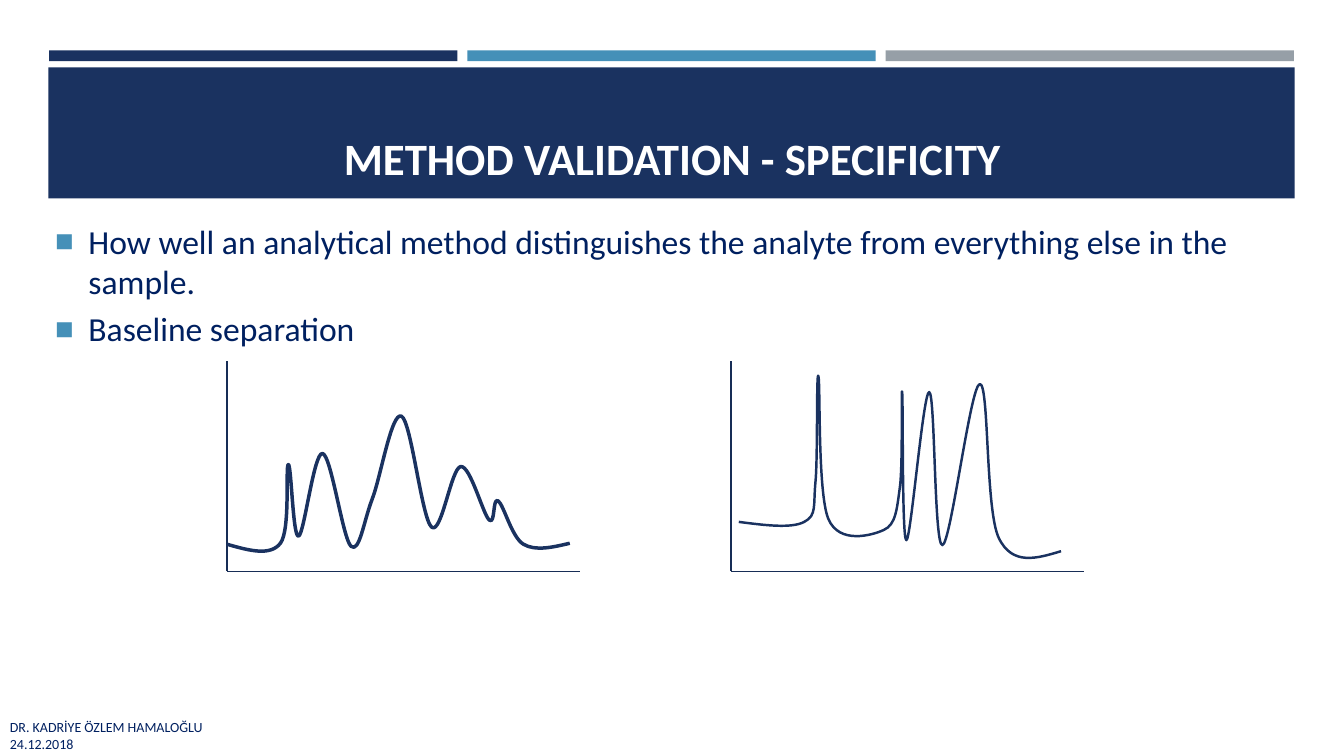
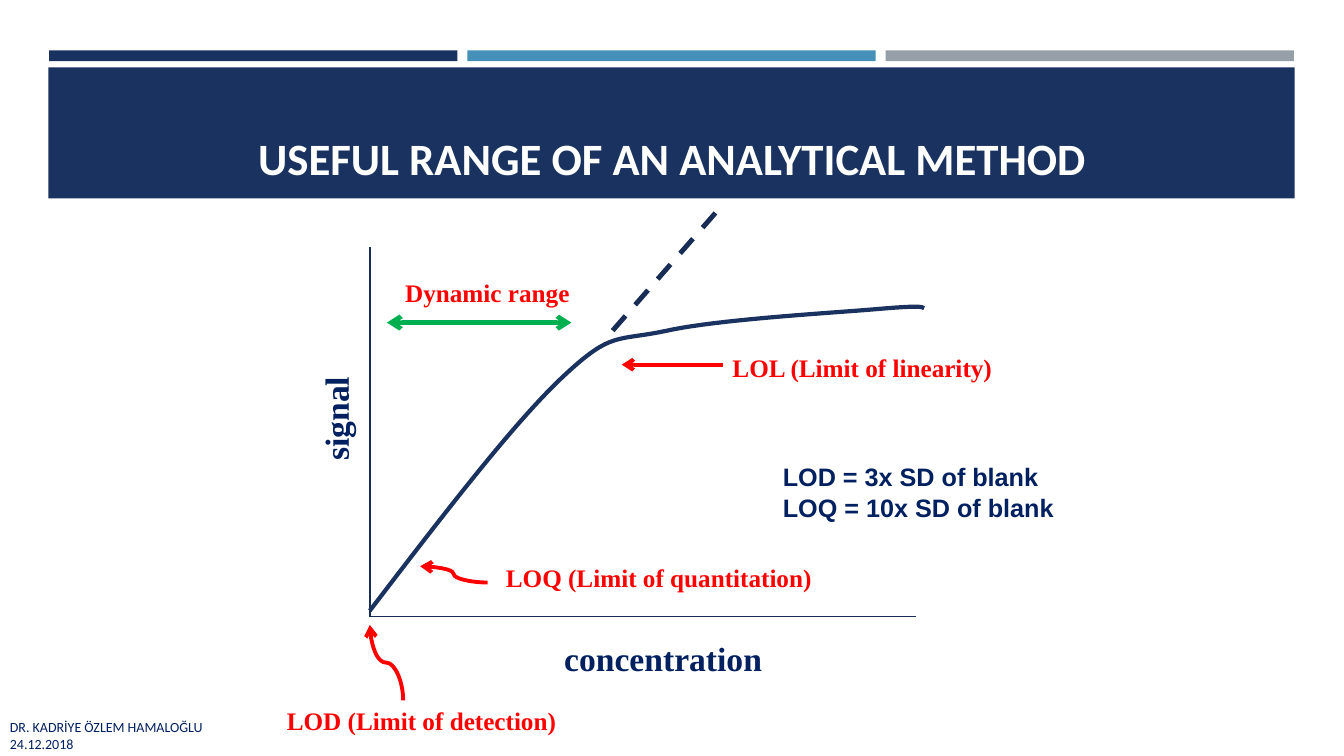
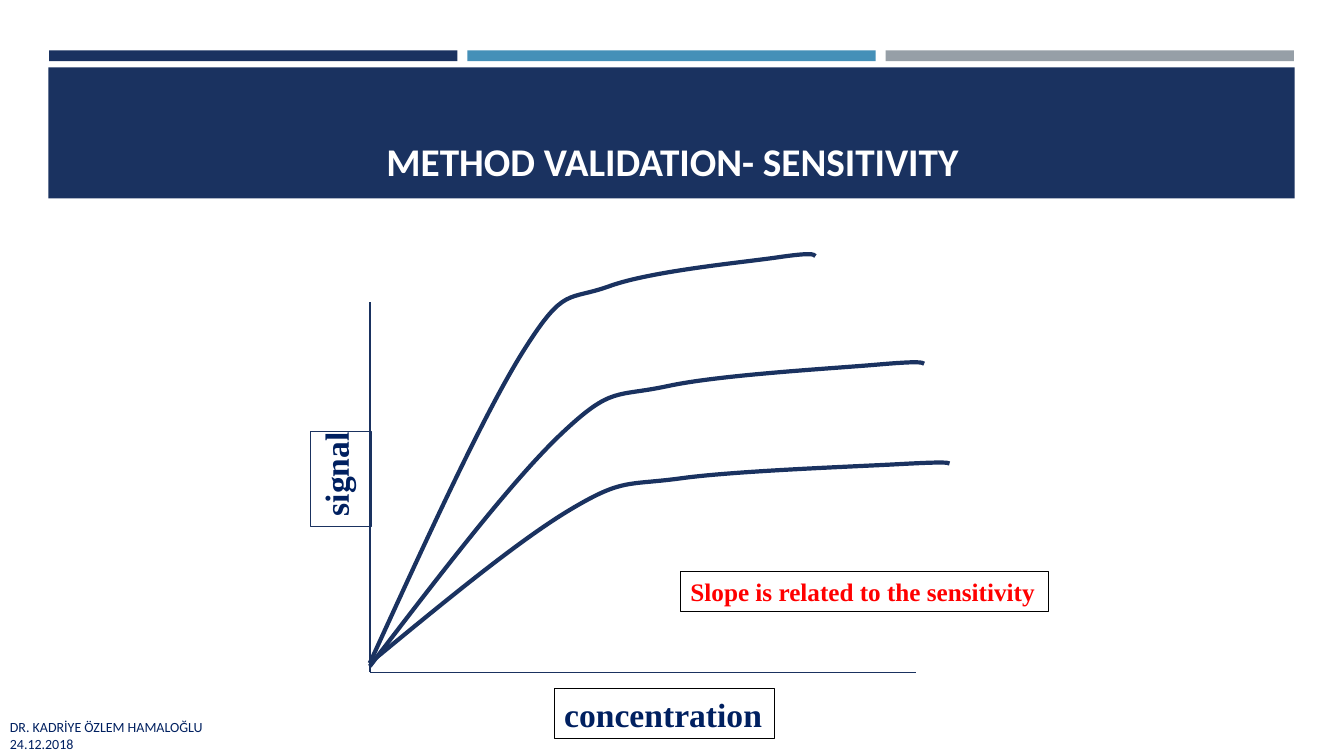
from lxml import etree
from pptx import Presentation
from pptx.dml.color import RGBColor
from pptx.enum.dml import MSO_LINE
from pptx.enum.shapes import MSO_CONNECTOR, MSO_SHAPE
from pptx.enum.text import MSO_ANCHOR, MSO_AUTO_SIZE, PP_ALIGN
from pptx.oxml.ns import qn
from pptx.util import Cm, Pt

RECT = MSO_SHAPE.RECTANGLE
STRAIGHT, CURVED = MSO_CONNECTOR.STRAIGHT, MSO_CONNECTOR.CURVE
DASH = MSO_LINE.DASH
TOP, MIDDLE, BOTTOM = MSO_ANCHOR.TOP, MSO_ANCHOR.MIDDLE, MSO_ANCHOR.BOTTOM
LEFT, CENTER = PP_ALIGN.LEFT, PP_ALIGN.CENTER
GROW = MSO_AUTO_SIZE.SHAPE_TO_FIT_TEXT

NAVY, AXIS, BLUE, GREY = "1A3260", "172D56", "4590B8", "969FA7"
INK, RED, GREEN, WHITE, BLACK = "002060", "FF0000", "00B050", "FFFFFF", "000000"
SANS, SERIF, PLAIN = "Calibri", "Times New Roman", "Arial"

RESPONSE = [(0, 100), (34.8, 23.5), (53.8, 8.3), (91.5, 1.3), (100, 1)]
MERGED = [(0, 91.7), (15.6, 91), (17.9, 36.8), (20.9, 86.1), (27.9, 29.2),
          (36.2, 93.1), (42.4, 60.4), (50.9, 3.5), (59.7, 79.9), (68.2, 38.2),
          (76.5, 75), (79.1, 61.8), (86.5, 91.7), (100, 91)]
APART = [(0, 77.4), (20.3, 77.4), (23.8, 56.9), (24.7, 3.1), (27.8, 75.9),
         (45, 81.5), (50, 59.5), (50.7, 11.3), (52, 86.7), (59.1, 11.3),
         (63.2, 89.2), (74.8, 7.2), (80.7, 85.6), (100, 92.3)]


def paint(part, hue):
    """Give a fill, font or line colour its hex value."""
    part.rgb = RGBColor.from_string(hue)


def block(slide, box, hue):
    """Draw a plain filled rectangle."""
    shape = slide.shapes.add_shape(RECT, *map(Cm, box))
    shape.shadow.inherit = False
    shape.fill.solid()
    paint(shape.fill.fore_color, hue)
    shape.line.fill.background()


def write(slide, box, text, size, font=SANS, hue=INK, bold=False,
          anchor=TOP, align=LEFT, wrap=True):
    """Place a text box and format its runs."""
    shape = slide.shapes.add_textbox(*map(Cm, box))
    frame = shape.text_frame
    frame.word_wrap = wrap
    frame.vertical_anchor = anchor
    frame.text = text
    for para in frame.paragraphs:
        para.alignment = align
        for run in para.runs:
            run.font.size, run.font.name, run.font.bold = Pt(size), font, bold
            paint(run.font.color, hue)
    return shape


def label(slide, box, text, size=18, hue=RED, edge=None):
    """Place a bold serif label, with a border if an edge colour is given."""
    shape = write(slide, box, text, size, SERIF, hue, True, wrap=False)
    shape.text_frame.auto_size = GROW
    if edge:
        paint(shape.line.color, edge)
        shape.line.width = Pt(0.75)
    return shape


def link(slide, start, end, hue, width, kind=STRAIGHT, ends=(), dash=None,
         turn=False):
    """Draw a connector; a turned one leaves its start vertically."""
    if turn:
        mid = [(a + b) / 2 for a, b in zip(start, end)]
        dx, dy = start[0] - mid[0], start[1] - mid[1]
        start = mid[0] - dy, mid[1] + dx
        end = mid[0] + dy, mid[1] - dx
    line = slide.shapes.add_connector(kind, *map(Cm, (*start, *end)))
    paint(line.line.color, hue)
    line.line.width = Pt(width)
    if dash:
        line.line.dash_style = dash
    props = line.element.spPr
    for end_tag in ends:
        etree.SubElement(props.find(qn("a:ln")), qn(end_tag), type="arrow")
    etree.SubElement(props, qn("a:effectLst"))
    if turn:
        props.find(qn("a:xfrm")).set("rot", "16200000")


def spline(knots):
    """Return the Bezier points of a smooth curve through the knots."""
    def slope(i, axis):
        return (knots[i + 1][axis] - knots[i - 1][axis]) / 6

    def near(i, sign):
        return tuple(knots[i][k] + sign * slope(i, k) for k in (0, 1))

    def half(a, b):
        return (a[0] + b[0]) / 2, (a[1] + b[1]) / 2

    last = len(knots) - 1
    points = []
    for i in range(last):
        out = near(i, 1) if i else half(knots[0], near(1, -1))
        into = near(i + 1, -1) if i + 1 < last else half(out, knots[last])
        points += [out, into, knots[i + 1]]
    return points


def curve(slide, box, knots, width):
    """Draw a smooth line through knots given in percent of the box."""
    left, top, wide, high = box

    def place(point):
        return (Cm(left + wide * point[0] / 100), Cm(top + high * point[1] / 100))

    pen = slide.shapes.build_freeform(*place(knots[0]))
    pen.add_line_segments([place(p) for p in spline(knots)], close=False)
    shape = pen.convert_to_shape()
    shape.shadow.inherit = False
    shape.fill.background()
    paint(shape.line.color, NAVY)
    shape.line.width = Pt(width)
    trace = next(shape.element.iter(qn("a:path")))
    steps = trace.findall(qn("a:lnTo"))
    for i in range(0, len(steps), 3):
        bend = etree.SubElement(trace, qn("a:cubicBezTo"))
        for step in steps[i:i + 3]:
            bend.append(step[0])
            trace.remove(step)


def axes(slide, box, hue=AXIS):
    """Draw the left and bottom axis of a box."""
    left, top, wide, high = box
    base = (left, top + high)
    link(slide, (left, top), base, hue, 1)
    link(slide, base, (left + wide, top + high), hue, 1)


def bullets(slide, box, text):
    """Place a list with square bullets."""
    shape = write(slide, box, text, 24, anchor=MIDDLE)
    for para in shape.text_frame.paragraphs:
        para.space_before = Pt(4.8)
        props = para._p.get_or_add_pPr()
        props.set("marL", str(Cm(0.84)))
        props.set("indent", str(-Cm(0.84)))
        tint = etree.SubElement(props, qn("a:buClr"))
        etree.SubElement(tint, qn("a:srgbClr"), val=BLUE)
        etree.SubElement(props, qn("a:buSzPct"), val="92000")
        etree.SubElement(props, qn("a:buFont"), typeface=PLAIN)
        etree.SubElement(props, qn("a:buChar"), char="■")


def base(deck, title, size=32):
    """Add a slide with the shared bars, title band and footer."""
    slide = deck.slides.add_slide(deck.slide_layouts[6])
    for i, hue in enumerate((NAVY, BLUE, GREY)):
        block(slide, (1.24 + 10.54 * i, 1.27, 10.29, 0.27), hue)
    block(slide, (1.22, 1.7, 31.41, 3.3), NAVY)
    write(slide, (1.63, 1.96, 30.63, 2.82), title, size, hue=WHITE, bold=True,
          anchor=BOTTOM, align=CENTER)
    write(slide, (0, 18.03, 19.2, 1.02),
          "DR. KADRİYE ÖZLEM HAMALOĞLU\n24.12.2018", 10, anchor=MIDDLE)
    return slide


def graph(slide, box, hue, edges=(None, None)):
    """Draw a response graph with its axis labels and main curve."""
    left, top = box[:2]
    axes(slide, box, hue)
    side = label(slide, (left - 1.5, top + 3.25, 1.55, 2.39), "signal", 24, INK,
                 edges[0])
    side.element.txBody.bodyPr.set("vert", "vert270")
    label(slide, (left + 4.65, top + 9.73, 5.54, 1.27), "concentration", 24, INK,
          edges[1])
    curve(slide, (left, top + 1.47, 13.97, 7.7), RESPONSE, 3)


def peaks(deck):
    """Build the specificity slide."""
    slide = base(deck, "METHOD VALIDATION - SPECIFICITY")
    bullets(slide, (1.14, 4.9, 32.72, 4.55),
            "How well an analytical method distinguishes the analyte from "
            "everything else in the sample.\nBaseline separation")
    for left in (5.72, 18.42):
        axes(slide, (left, 9.1, 8.89, 5.3))
    curve(slide, (5.72, 10.36, 8.64, 3.66), MERGED, 2.5)
    curve(slide, (18.62, 9.32, 8.12, 4.95), APART, 1.75)


def limits(deck, box):
    """Build the useful range slide around the graph box."""
    slide = base(deck, "USEFUL RANGE OF AN ANALYTICAL METHOD")
    graph(slide, box, AXIS)
    left, top = box[:2]

    def at(x, y):
        return left + x, top + y

    for x, y, wide, text in (
            (-2.34, 11.43, 7.37, "LOD (Limit of detection)"),
            (3.18, 7.83, 8.31, "LOQ (Limit of quantitation)"),
            (8.89, 2.54, 7.11, "LOL (Limit of linearity)"),
            (0.64, 0.64, 4.7, "Dynamic range")):
        label(slide, (*at(x, y), wide, 1.02), text)
    for start, end, turn in (
            ((0.84, 11.43), (0, 9.53), True),
            ((2.97, 8.46), (1.27, 8.05), False),
            ((8.89, 2.97), (6.35, 2.97), False)):
        link(slide, at(*start), at(*end), RED, 2.75, CURVED, ["a:tailEnd"],
             turn=turn)
    link(slide, at(0.43, 1.91), at(5.08, 1.91), GREEN, 3.25,
         ends=["a:headEnd", "a:tailEnd"])
    link(slide, at(6.12, 2.11), at(8.89, -1.06), AXIS, 3.5, dash=DASH)
    write(slide, (*at(10.16, 5.29), 8.26, 1.8),
          "LOD = 3x SD of blank\nLOQ = 10x SD of blank", 18, PLAIN, bold=True)


def slopes(deck, box):
    """Build the sensitivity slide around the graph box."""
    slide = base(deck, "METHOD VALIDATION- SENSITIVITY", 28)
    graph(slide, box, NAVY, (NAVY, BLACK))
    left, top = box[:2]
    curve(slide, (left, top + 4.01, 14.61, 5.08), RESPONSE, 3)
    curve(slide, (left, top - 1.27, 11.23, 10.36), RESPONSE, 3)
    label(slide, (left + 7.83, top + 6.78, 9.27, 1.02),
          "Slope is related to the sensitivity", edge=BLACK)


def main():
    """Build and save the deck."""
    deck = Presentation()
    deck.slide_width, deck.slide_height = Cm(33.87), Cm(19.05)
    peaks(deck)
    limits(deck, (9.32, 6.22, 13.77, 9.32))
    slopes(deck, (9.32, 7.62, 13.77, 9.32))
    deck.save("out.pptx")


if __name__ == "__main__":
    main()
